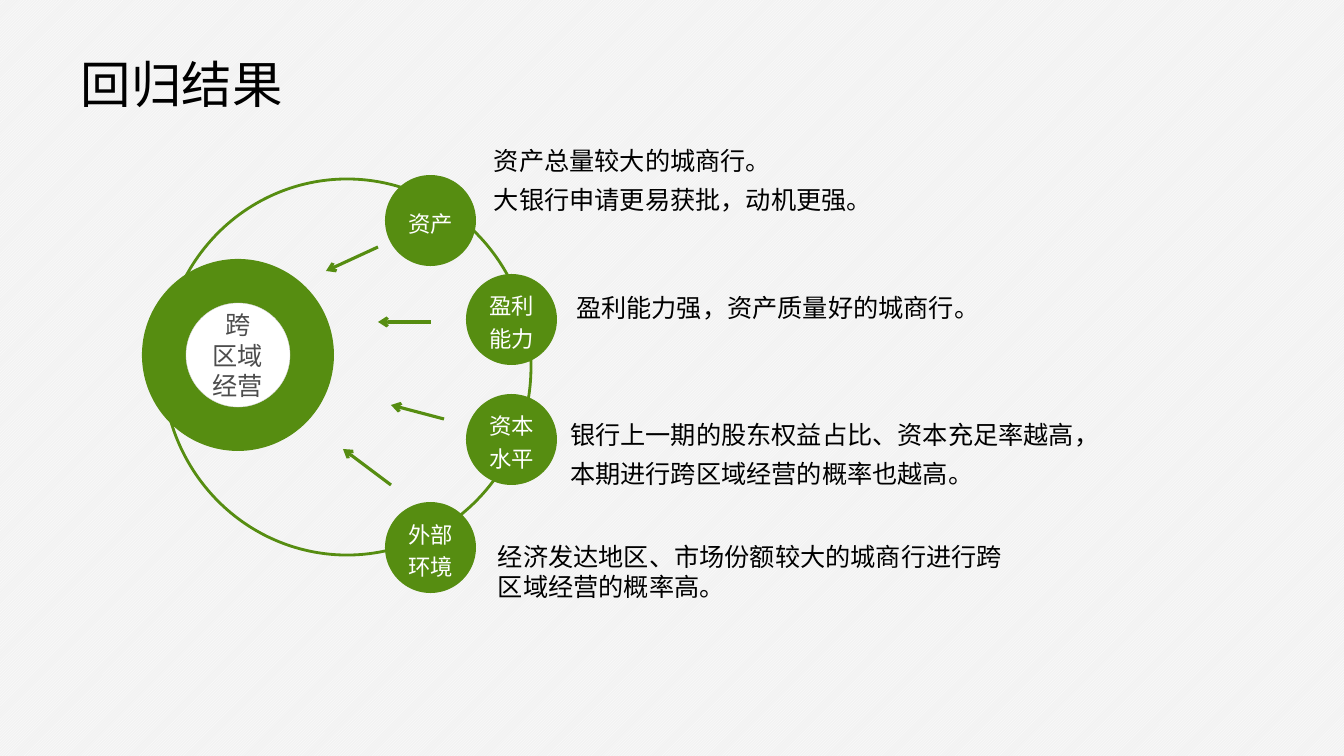
"""Build the regression results slide: four factors around cross-region operation."""
from lxml.etree import SubElement
from pptx import Presentation
from pptx.dml.color import RGBColor
from pptx.enum.dml import MSO_PATTERN
from pptx.enum.shapes import MSO_CONNECTOR, MSO_SHAPE
from pptx.enum.text import MSO_ANCHOR, MSO_AUTO_SIZE, PP_ALIGN
from pptx.oxml.ns import qn
from pptx.util import Pt

PX = 914400 / 100.8
COLORS = {"green": "568D11", "white": "FFFFFF", "paper": "F2F2F2",
          "rim": "D7D7D7", "gray": "4D4D4D", "black": "000000"}
RGB = {name: RGBColor.from_string(value) for name, value in COLORS.items()}

deck = Presentation()
deck.slide_width, deck.slide_height = round(1344 * PX), round(756 * PX)
page = deck.slides.add_slide(deck.slide_layouts[6])
backdrop = page.background.fill
backdrop.patterned()
backdrop.pattern = MSO_PATTERN.LIGHT_UPWARD_DIAGONAL
backdrop.fore_color.rgb = RGB["white"]
backdrop.back_color.rgb = RGB["paper"]


def add_circle(left, top, width, height, fill=None, line=None, weight=0):
    circle = page.shapes.add_shape(
        MSO_SHAPE.OVAL, *(round(n * PX) for n in (left, top, width, height)))
    circle.shadow.inherit = False
    if fill:
        circle.fill.solid()
        circle.fill.fore_color.rgb = RGB[fill]
    else:
        circle.fill.background()
    if line:
        circle.line.color.rgb = RGB[line]
        circle.line.width = Pt(weight)
    else:
        circle.line.fill.background()
    return circle


def write(box, text, size=18, font="Arial", color="black", align=PP_ALIGN.LEFT,
          anchor=MSO_ANCHOR.TOP, spacing=None, inset=(8, 4), grow=False):
    frame = box.text_frame
    frame.word_wrap = True
    frame.vertical_anchor = anchor
    frame.auto_size = MSO_AUTO_SIZE.SHAPE_TO_FIT_TEXT if grow else MSO_AUTO_SIZE.NONE
    frame.margin_left = frame.margin_right = round(inset[0] * PX)
    frame.margin_top = frame.margin_bottom = round(inset[1] * PX)
    frame.text = text
    for para in frame.paragraphs:
        para.alignment = align
        para.line_spacing = spacing
        for span in para.runs:
            span.font.size = Pt(size)
            span.font.name = font
            span.font.color.rgb = RGB[color]


add_circle(163, 179, 368, 376, line="green", weight=2)

arrows = [(378, 247, 326, 271), (431, 322, 378, 322),
          (444, 419, 391, 405), (391, 485, 343, 449)]
for ends in arrows:
    arrow = page.shapes.add_connector(
        MSO_CONNECTOR.STRAIGHT, *(round(n * PX) for n in ends))
    arrow.line.color.rgb = RGB["green"]
    arrow.line.width = Pt(2.25)
    SubElement(arrow.line._get_or_add_ln(), qn("a:tailEnd"), type="arrow")
    SubElement(arrow._element.spPr, qn("a:effectLst"))

add_circle(142, 259, 192, 192, fill="green")
hub = add_circle(186, 303, 104, 104, fill="white", line="rim", weight=0.25)
write(hub, "跨\n区域\n经营", font="Roboto Condensed", color="gray",
      align=PP_ALIGN.CENTER, anchor=MSO_ANCHOR.MIDDLE, inset=(10, 5))

factors = [("资产", 385, 175), ("盈利能力", 466, 274),
           ("资本水平", 466, 394), ("外部环境", 385, 502)]
for name, left, top in factors:
    write(add_circle(left, top, 91, 91, fill="green"), name, size=16, color="white",
          align=PP_ALIGN.CENTER, anchor=MSO_ANCHOR.MIDDLE, spacing=1.2)

finding = {"spacing": 1.3}
plain = {"font": "Calibri", "inset": (10, 5)}
texts = [
    ("回归结果", (71, 48, 231, 72), {**plain, "size": 36}),
    ("资产总量较大的城商行。\n大银行申请更易获批，动机更强。", (486, 132, 552, 88), finding),
    ("盈利能力强，资产质量好的城商行。", (568, 279, 460, 48), finding),
    ("银行上一期的股东权益占比、资本充足率越高，本期进行跨区域经营的概率也越高。",
     (562, 406, 555, 88), finding),
    ("经济发达地区、市场份额较大的城商行进行跨区域经营的概率高。",
     (488, 536, 539, 72), plain),
]
for text, place, style in texts:
    box = page.shapes.add_textbox(*(round(n * PX) for n in place))
    write(box, text, grow=True, **style)

deck.save("out.pptx")
